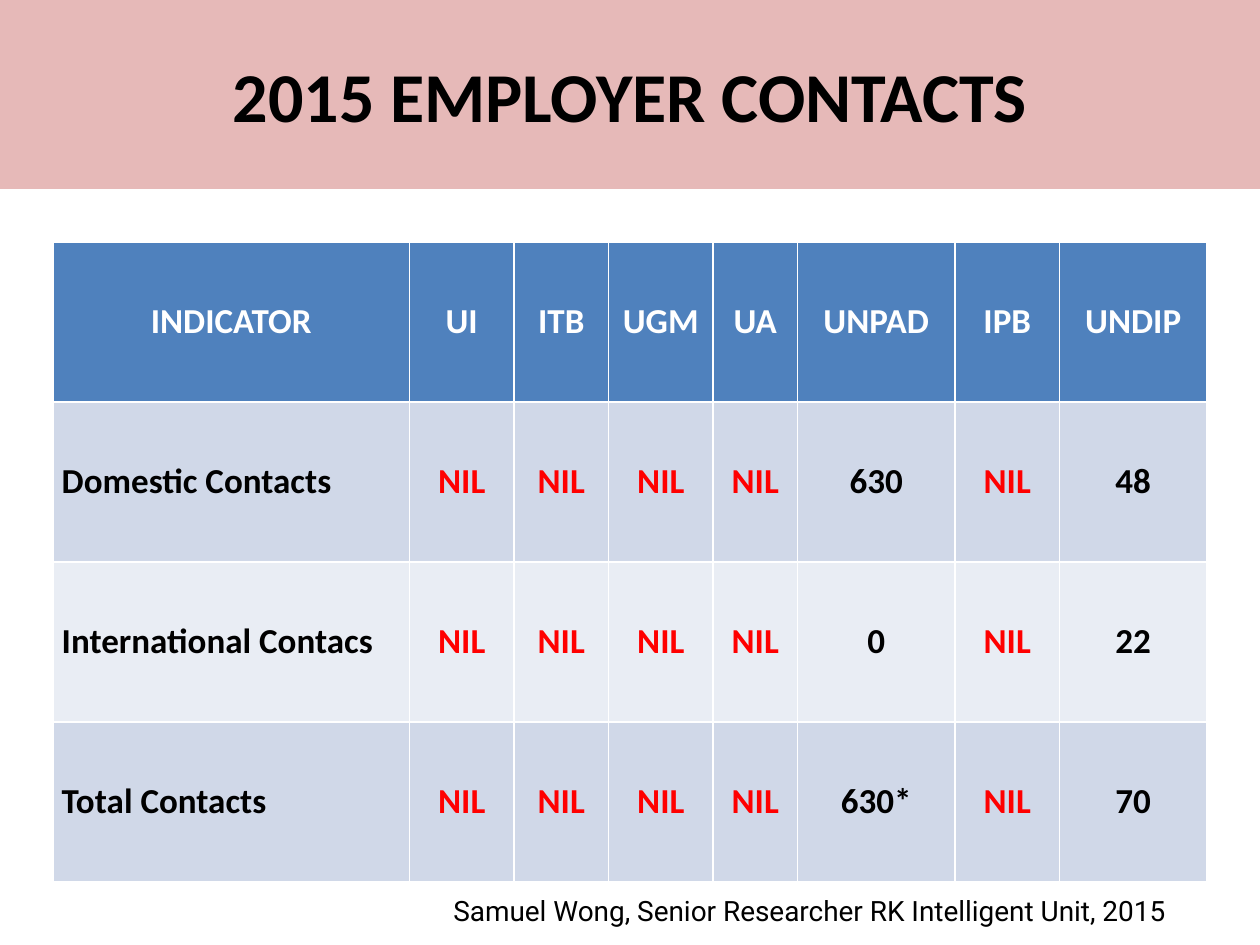
from pptx import Presentation
from pptx.dml.color import RGBColor
from pptx.enum.shapes import MSO_SHAPE
from pptx.enum.text import MSO_ANCHOR, MSO_AUTO_SIZE, PP_ALIGN
from pptx.util import Inches, Pt

BLACK = RGBColor(0x00, 0x00, 0x00)
WHITE = RGBColor(0xFF, 0xFF, 0xFF)
RED = RGBColor(0xFF, 0x00, 0x00)
PINK = RGBColor(0xE6, 0xB9, 0xB8)
BLUE = RGBColor(0x4F, 0x81, 0xBD)
BANDS = [RGBColor(0xE9, 0xED, 0xF4), RGBColor(0xD0, 0xD8, 0xE8)]

COLUMN_WIDTHS = [2.83, 0.83, 0.75, 0.83, 0.67, 1.25, 0.83, 1.17]
ROW_HEIGHT = 1.27
CONTACTS = [
    ["INDICATOR", "UI", "ITB", "UGM", "UA", "UNPAD", "IPB", "UNDIP"],
    ["Domestic Contacts", "NIL", "NIL", "NIL", "NIL", "630", "NIL", "48"],
    ["International Contacs", "NIL", "NIL", "NIL", "NIL", "0", "NIL", "22"],
    ["Total Contacts", "NIL", "NIL", "NIL", "NIL", "630*", "NIL", "70"],
]


def write_text(frame, text, font="Calibri", size=20, color=BLACK, bold=False,
               align=PP_ALIGN.LEFT):
    para = frame.paragraphs[0]
    para.alignment = align
    span = para.add_run()
    span.text = text
    span.font.name = font
    span.font.size = Pt(size)
    span.font.bold = bold
    span.font.color.rgb = color


class SlideBuilder:
    def __init__(self, page):
        self.page = page

    def banner(self, text, left, top, width, height):
        box = self.page.shapes.add_shape(
            MSO_SHAPE.RECTANGLE, Inches(left), Inches(top), Inches(width), Inches(height))
        box.shadow.inherit = False
        box.fill.solid()
        box.fill.fore_color.rgb = PINK
        box.line.fill.background()
        box.text_frame.word_wrap = True
        box.text_frame.vertical_anchor = MSO_ANCHOR.MIDDLE
        write_text(box.text_frame, text, size=40, bold=True, align=PP_ALIGN.CENTER)

    def caption(self, text, left, top, width, height):
        box = self.page.shapes.add_textbox(
            Inches(left), Inches(top), Inches(width), Inches(height))
        box.text_frame.word_wrap = True
        box.text_frame.auto_size = MSO_AUTO_SIZE.SHAPE_TO_FIT_TEXT
        write_text(box.text_frame, text, font="Roboto", size=16)

    def table(self, rows, widths, row_height, left, top):
        table = self.page.shapes.add_table(
            len(rows), len(widths), Inches(left), Inches(top),
            Inches(sum(widths)), Inches(row_height * len(rows))).table
        for column, width in zip(table.columns, widths):
            column.width = Inches(width)
        for row_index, row in enumerate(rows):
            table.rows[row_index].height = Inches(row_height)
            for column_index, text in enumerate(row):
                self.cell(table.cell(row_index, column_index), text,
                          row_index, column_index)

    def cell(self, cell, text, row_index, column_index):
        is_header = row_index == 0
        is_label = column_index == 0 and not is_header
        cell.fill.solid()
        cell.fill.fore_color.rgb = BLUE if is_header else BANDS[row_index % 2]
        cell.vertical_anchor = MSO_ANCHOR.MIDDLE
        cell.margin_left = cell.margin_right = Inches(0.07)
        cell.margin_top = cell.margin_bottom = Inches(0.04)
        color = WHITE if is_header else RED if text == "NIL" else BLACK
        write_text(cell.text_frame, text, color=color, bold=True,
                   align=PP_ALIGN.LEFT if is_label else PP_ALIGN.CENTER)


def main():
    deck = Presentation()
    deck.slide_width = Inches(10)
    deck.slide_height = Inches(7.5)
    builder = SlideBuilder(deck.slides.add_slide(deck.slide_layouts[6]))
    builder.table(CONTACTS, COLUMN_WIDTHS, ROW_HEIGHT, 0.42, 1.92)
    builder.banner("2015 EMPLOYER CONTACTS", 0, 0, 10, 1.5)
    builder.caption("Samuel Wong, Senior Researcher RK Intelligent Unit, 2015",
                    3.5, 7.04, 6.33, 0.37)
    deck.save("out.pptx")


if __name__ == "__main__":
    main()
